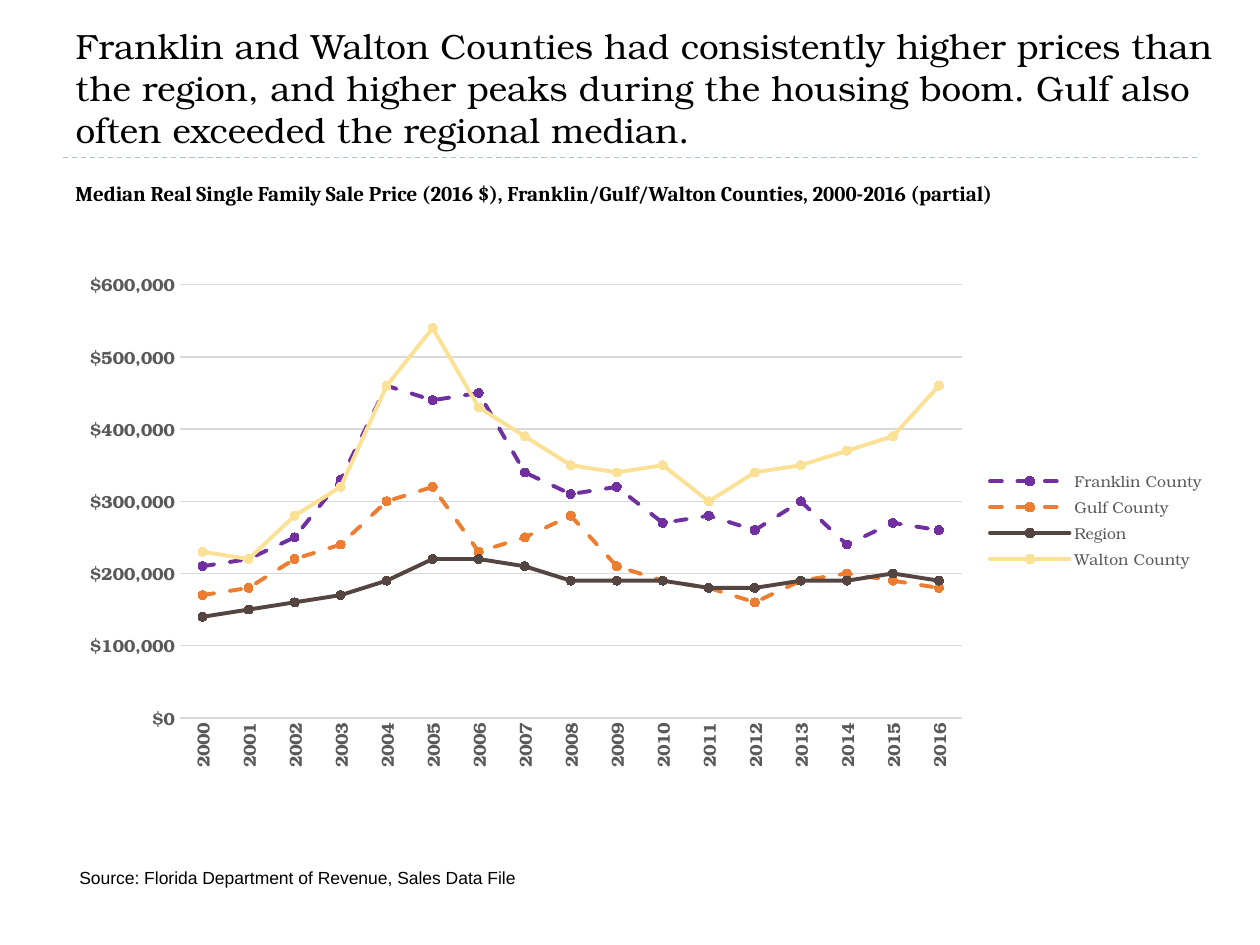
import pptx
import pptx.chart.data
import pptx.dml.color
import pptx.enum.chart
import pptx.enum.dml
import pptx.enum.shapes
import pptx.enum.text
import pptx.oxml
import pptx.oxml.ns
import pptx.util

Cm = pptx.util.Cm
Pt = pptx.util.Pt
DASH = pptx.enum.dml.MSO_LINE.DASH
SERIF = "TeX Gyre Bonum"
HUES = {
    "text": "000000", "back": "FFFFFF", "rule": "9FB8CD",
    "label": "595959", "grid": "D9D9D9",
    "Franklin County": "7030A0", "Gulf County": "ED7D31",
    "Region": "554540", "Walton County": "FBE195",
}
PRICES = {
    "Franklin County": [210, 220, 250, 330, 460, 440, 450, 340, 310,
                        320, 270, 280, 260, 300, 240, 270, 260],
    "Gulf County": [170, 180, 220, 240, 300, 320, 230, 250, 280,
                    210, 190, 180, 160, 190, 200, 190, 180],
    "Region": [140, 150, 160, 170, 190, 220, 220, 210, 190,
               190, 190, 180, 180, 190, 190, 200, 190],
    "Walton County": [230, 220, 280, 320, 460, 540, 430, 390, 350,
                      340, 350, 300, 340, 350, 370, 390, 460],
}
DASHED = ("Franklin County", "Gulf County")


def hue(name):
    """Return the named colour."""
    return pptx.dml.color.RGBColor.from_string(HUES[name])


def style(font, face, size, tint="text", bold=False):
    """Set face, size, colour and weight of a font."""
    font.name, font.size, font.bold = face, Pt(size), bold
    font.color.rgb = hue(tint)


def stroke(line, tint, width):
    """Set colour and width of a line."""
    line.color.rgb = hue(tint)
    line.width = Pt(width)


def head(slide, box, words):
    """Place the title in its box with a dashed rule under it."""
    left, top, width, height = box
    title = slide.shapes.title
    title.left, title.top, title.width, title.height = map(Cm, box)
    title.fill.solid()
    title.fill.fore_color.rgb = hue("back")
    frame = title.text_frame
    frame.text = words
    frame.auto_size = pptx.enum.text.MSO_AUTO_SIZE.NONE
    frame.vertical_anchor = pptx.enum.text.MSO_ANCHOR.BOTTOM
    para = frame.paragraphs[0]
    para.alignment = pptx.enum.text.PP_ALIGN.LEFT
    style(para.runs[0].font, SERIF, 20)
    base = Cm(top + height)
    rule = slide.shapes.add_connector(
        pptx.enum.shapes.MSO_CONNECTOR.STRAIGHT,
        Cm(left), base, Cm(left + 22.86), base)
    stroke(rule.line, "rule", 0.75)
    rule.line.dash_style = DASH
    rule._element.spPr.append(pptx.oxml.parse_xml(
        "<a:effectLst %s/>" % pptx.oxml.ns.nsdecls("a")))
    title._element.addprevious(rule._element)


def note(slide, box, words, face, size, bold=False):
    """Place one line of text in its box and return its paragraph."""
    frame = slide.shapes.add_textbox(*map(Cm, box)).text_frame
    frame.word_wrap = True
    frame.text = words
    para = frame.paragraphs[0]
    style(para.runs[0].font, face, size, bold=bold)
    return para


def axes(chart):
    """Format both axes of the price chart."""
    years, money = chart.category_axis, chart.value_axis
    for axis in (years, money):
        axis.major_tick_mark = pptx.enum.chart.XL_TICK_MARK.NONE
        axis.minor_tick_mark = pptx.enum.chart.XL_TICK_MARK.NONE
        style(axis.tick_labels.font, SERIF, 10, "label", True)
    stroke(years.format.line, "grid", 0.75)
    turn = years._element.find(".//" + pptx.oxml.ns.qn("a:bodyPr"))
    turn.set("rot", "-5400000")
    turn.set("vert", "horz")
    money.format.line.fill.background()
    money.minimum_scale, money.maximum_scale = 0, 600000
    money.major_unit = 100000
    stroke(money.major_gridlines.format.line, "grid", 0.75)
    money.tick_labels.number_format = '"$"#,##0'
    money.tick_labels.number_format_is_linked = False


def graph(slide, box):
    """Place the line chart of median prices in its box."""
    data = pptx.chart.data.CategoryChartData(number_format='"$"#,##0')
    data.categories = [str(year) for year in range(2000, 2017)]
    for name, row in PRICES.items():
        data.add_series(name, [price * 1000 for price in row])
    chart = slide.shapes.add_chart(
        pptx.enum.chart.XL_CHART_TYPE.LINE_MARKERS,
        *map(Cm, box), data).chart
    chart.has_title = False
    style(chart.font, SERIF, 10)
    axes(chart)
    chart.has_legend = True
    chart.legend.position = pptx.enum.chart.XL_LEGEND_POSITION.RIGHT
    chart.legend.include_in_layout = False
    style(chart.legend.font, SERIF, 9, "label")
    chart.plots[0].vary_by_categories = False
    for line in chart.plots[0].series:
        line.smooth = False
        stroke(line.format.line, line.name, 2.25)
        line.format.line._get_or_add_ln().set("cap", "rnd")
        if line.name in DASHED:
            line.format.line.dash_style = DASH
        mark = line.marker
        mark.style = pptx.enum.chart.XL_MARKER_STYLE.CIRCLE
        mark.size = 5
        mark.format.fill.solid()
        mark.format.fill.fore_color.rgb = hue(line.name)
        stroke(mark.format.line, line.name, 0.75)


def main():
    """Build the slide and save it."""
    deck = pptx.Presentation()
    deck.slide_width, deck.slide_height = Cm(25.4), Cm(19.05)
    slide = deck.slides.add_slide(deck.slide_layouts[5])
    head(slide, (1.27, 0.43, 23.5, 2.74),
         "Franklin and Walton Counties had consistently higher prices than "
         "the region, and higher peaks during the housing boom. Gulf also "
         "often exceeded the regional median.")
    lead = note(slide, (1.27, 3.45, 22.23, 0.84),
                "Median Real Single Family Sale Price (2016 $), "
                "Franklin/Gulf/Walton Counties, 2000-2016 (partial)",
                "Cambria", 12, True)
    lead.line_spacing = 1.12
    lead.space_before = lead.space_after = Pt(10)
    note(slide, (1.35, 17.35, 21.16, 0.69),
         "Source: Florida Department of Revenue, Sales Data File",
         "Arial", 10)
    graph(slide, (1.35, 5.28, 23.19, 10.41))
    deck.save("out.pptx")


if __name__ == "__main__":
    main()
